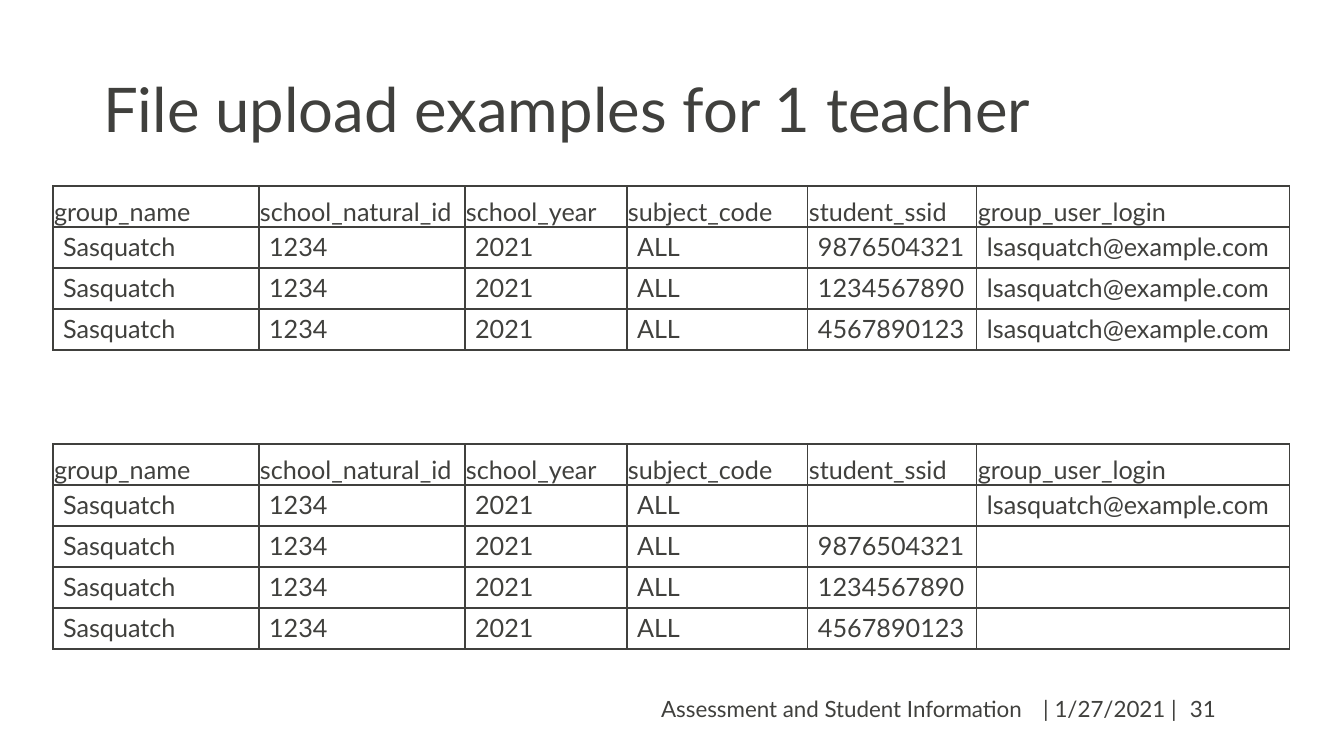
from lxml import etree
from pptx import Presentation
from pptx import util as u
from pptx.dml.color import RGBColor
from pptx.enum import text
from pptx.oxml import ns

EMU_PER_PX = 914400 / 100.8
INK = "40403D"
FONT = "Lato"

COLUMN_WIDTHS = [206, 206, 162, 181, 169, 313]
ROW_HEIGHT = 41
FIELDS = ["group_name", "school_natural_id", "school_year",
          "subject_code", "student_ssid", "group_user_login"]
CLASS_FIELDS = ["Sasquatch", "1234", "2021", "ALL"]
STUDENTS = ["9876504321", "1234567890", "4567890123"]
LOGIN = "lsasquatch@example.com"


def px(length):
    return u.Emu(round(length * EMU_PER_PX))


def color(hex_code):
    return RGBColor.from_string(hex_code)


def add_run(paragraph, words, size):
    run = paragraph.add_run()
    run.text = words
    run.font.size = u.Pt(size)
    run.font.name = FONT
    run.font.bold = False
    run.font.color.rgb = color(INK)


def place_title(slide, left, top, width, height, words):
    title = slide.shapes.title
    title.left, title.top = px(left), px(top)
    title.width, title.height = px(width), px(height)
    frame = title.text_frame
    frame.auto_size = text.MSO_AUTO_SIZE.NONE
    frame.vertical_anchor = text.MSO_ANCHOR.MIDDLE
    paragraph = frame.paragraphs[0]
    paragraph.alignment = text.PP_ALIGN.LEFT
    paragraph.line_spacing = 0.9
    add_run(paragraph, words, 44)


def add_borders(cell):
    properties = cell._tc.get_or_add_tcPr()
    for side in ("a:lnL", "a:lnR", "a:lnT", "a:lnB"):
        line = etree.SubElement(properties, ns.qn(side), w=str(u.Pt(1)))
        fill = etree.SubElement(line, ns.qn("a:solidFill"))
        etree.SubElement(fill, ns.qn("a:srgbClr"), val=INK)


def add_upload_table(slide, left, top, records):
    rows = [FIELDS] + records
    table = slide.shapes.add_table(
        len(rows), len(FIELDS), px(left), px(top),
        px(sum(COLUMN_WIDTHS)), px(ROW_HEIGHT * len(rows))).table
    table.horz_banding = False
    for column, width in zip(table.columns, COLUMN_WIDTHS):
        column.width = px(width)
    for row_index, values in enumerate(rows):
        table.rows[row_index].height = px(ROW_HEIGHT)
        for column_index, value in enumerate(values):
            cell = table.cell(row_index, column_index)
            add_borders(cell)
            cell.fill.background()
            # Field names sit tight on the bottom line
            if row_index == 0:
                cell.vertical_anchor = text.MSO_ANCHOR.BOTTOM
                cell.margin_left = cell.margin_right = cell.margin_top = px(1)
                cell.margin_bottom = 0
            if value:
                add_run(cell.text_frame.paragraphs[0], value, 18)


def add_footer(slide, left, top, height):
    parts = [
        (0, 641, "Assessment and Student Information", text.PP_ALIGN.RIGHT),
        (635, 168, "| 1/27/2021 |", text.PP_ALIGN.CENTER),
        (789, 71, "31", text.PP_ALIGN.LEFT),
    ]
    for offset, width, words, alignment in parts:
        box = slide.shapes.add_textbox(
            px(left + offset), px(top), px(width), px(height))
        frame = box.text_frame
        frame.word_wrap = True
        frame.vertical_anchor = text.MSO_ANCHOR.MIDDLE
        paragraph = frame.paragraphs[0]
        paragraph.alignment = alignment
        add_run(paragraph, words, 16)


def main():
    presentation = Presentation()
    presentation.slide_width, presentation.slide_height = px(1344), px(756)
    slide = presentation.slides.add_slide(presentation.slide_layouts[5])

    place_title(slide, 93, 40, 1159, 146, "File upload examples for 1 teacher")

    # Login repeated on every student row
    add_upload_table(slide, 53, 186,
                     [CLASS_FIELDS + [student, LOGIN] for student in STUDENTS])

    # Login on a row of its own, then the students
    add_upload_table(slide, 53, 444,
                     [CLASS_FIELDS + ["", LOGIN]]
                     + [CLASS_FIELDS + [student, ""] for student in STUDENTS])

    add_footer(slide, 391, 689, 40)
    presentation.save("out.pptx")


if __name__ == "__main__":
    main()
